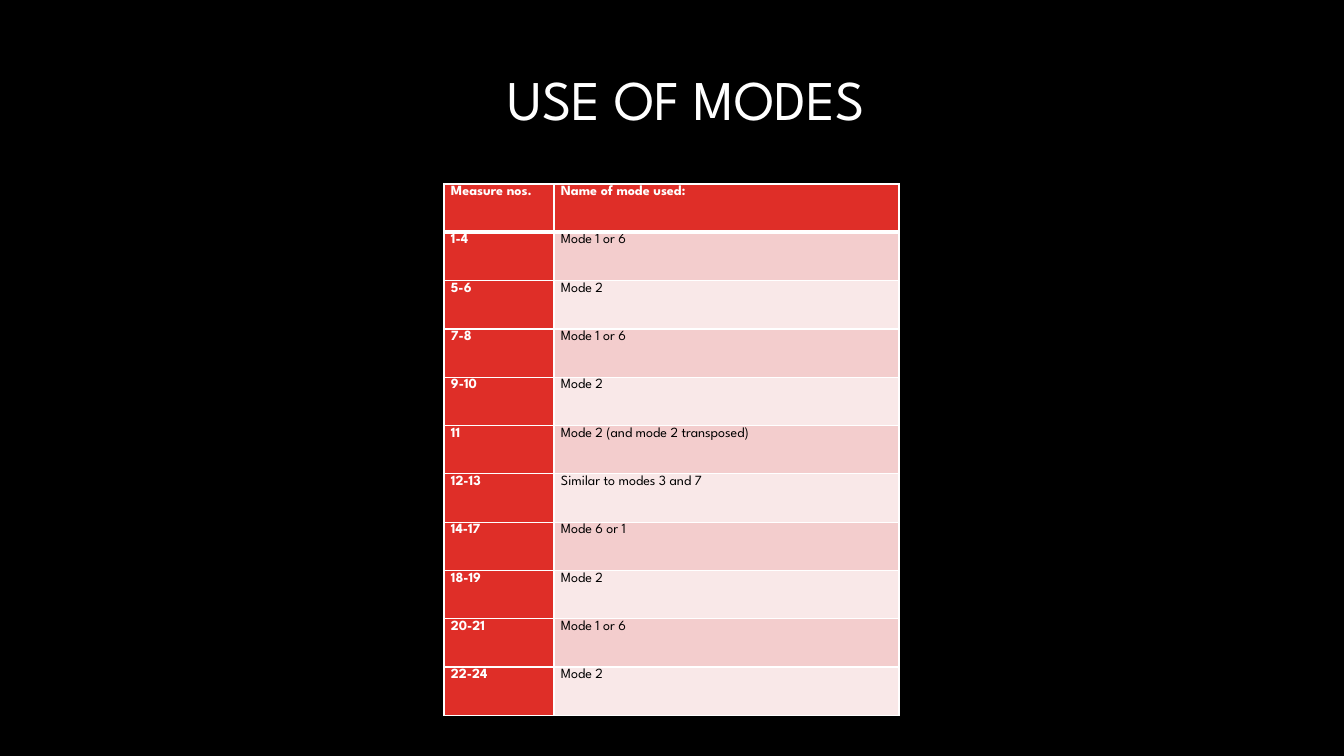
from lxml import etree
from pptx import Presentation
from pptx import util as u
from pptx.dml.color import RGBColor
from pptx.enum import text
from pptx.oxml.ns import qn

PX = 914400 / 100.8
FONT = "League Spartan"
COLOURS = {
    "background": "000000",
    "white": "FFFFFF",
    "ink": "000000",
    "red": "DF2E28",
    "pink": "F3CDCD",
    "pale": "F9E8E8",
}
COLUMN_WIDTHS = (110, 345)
ROW_HEIGHT = 48.3
MODES = (
    ("Measure nos.", "Name of mode used:"),
    ("1-4", "Mode 1 or 6"),
    ("5-6", "Mode 2"),
    ("7-8", "Mode 1 or 6"),
    ("9-10", "Mode 2"),
    ("11", "Mode 2 (and mode 2 transposed)"),
    ("12-13", "Similar to modes 3 and 7"),
    ("14-17", "Mode 6 or 1"),
    ("18-19", "Mode 2"),
    ("20-21", "Mode 1 or 6"),
    ("22-24", "Mode 2"),
)


def px(length):
    return u.Emu(round(length * PX))


def colour(name):
    return RGBColor.from_string(COLOURS[name])


def set_all(target, values):
    for name, value in values.items():
        setattr(target, name, value)


def write(para, words, size, ink, bold=False):
    span = para.add_run()
    span.text = words
    set_all(span.font, {"name": FONT, "size": u.Pt(size), "bold": bold})
    span.font.color.rgb = colour(ink)


def add_title(page, words):
    box = page.shapes.add_textbox(px(452), px(31), px(437), px(142))
    set_all(box.text_frame, {"word_wrap": True,
                             "vertical_anchor": text.MSO_ANCHOR.MIDDLE})
    para = box.text_frame.paragraphs[0]
    set_all(para, {"alignment": text.PP_ALIGN.RIGHT, "line_spacing": 0.9})
    write(para, words, 40, "white")


def add_borders(cell, widths):
    """Draw white borders; widths maps each side (L, R, T, B) to points."""
    properties = cell._tc.get_or_add_tcPr()
    for position, (side, width) in enumerate(widths.items()):
        line = etree.Element(qn(f"a:ln{side}"), w=str(u.Pt(width)))
        fill = etree.SubElement(line, qn("a:solidFill"))
        etree.SubElement(fill, qn("a:srgbClr"), val=COLOURS["white"])
        properties.insert(position, line)


def fill_cell(cell, words, fill, ink, bold, widths):
    set_all(cell, {"margin_left": px(7), "margin_right": px(7),
                   "margin_top": 0, "margin_bottom": 0})
    cell.fill.solid()
    cell.fill.fore_color.rgb = colour(fill)
    add_borders(cell, widths)
    para = cell.text_frame.paragraphs[0]
    para.line_spacing = 1.15
    write(para, words, 10, ink, bold)


def add_mode_table(page, left, top):
    frame = page.shapes.add_table(
        len(MODES), len(COLUMN_WIDTHS), px(left), px(top),
        px(sum(COLUMN_WIDTHS)), px(ROW_HEIGHT * len(MODES)))
    table = frame.table
    for column, width in zip(table.columns, COLUMN_WIDTHS):
        column.width = px(width)
    for number, values in enumerate(MODES):
        table.rows[number].height = px(ROW_HEIGHT)
        widths = {"L": 1, "R": 1, "T": 3 if number == 1 else 1,
                  "B": 3 if number == 0 else 1}
        for column, words in enumerate(values):
            heading = number == 0 or column == 0
            band = "pink" if number % 2 else "pale"
            fill_cell(table.cell(number, column), words,
                      "red" if heading else band,
                      "white" if heading else "ink", heading, widths)


def main():
    deck = Presentation()
    set_all(deck, {"slide_width": px(1344), "slide_height": px(756)})
    page = deck.slides.add_slide(deck.slide_layouts[6])
    page.background.fill.solid()
    page.background.fill.fore_color.rgb = colour("background")
    add_title(page, "USE OF MODES ")
    add_mode_table(page, 444, 184)
    deck.save("out.pptx")


if __name__ == "__main__":
    main()
